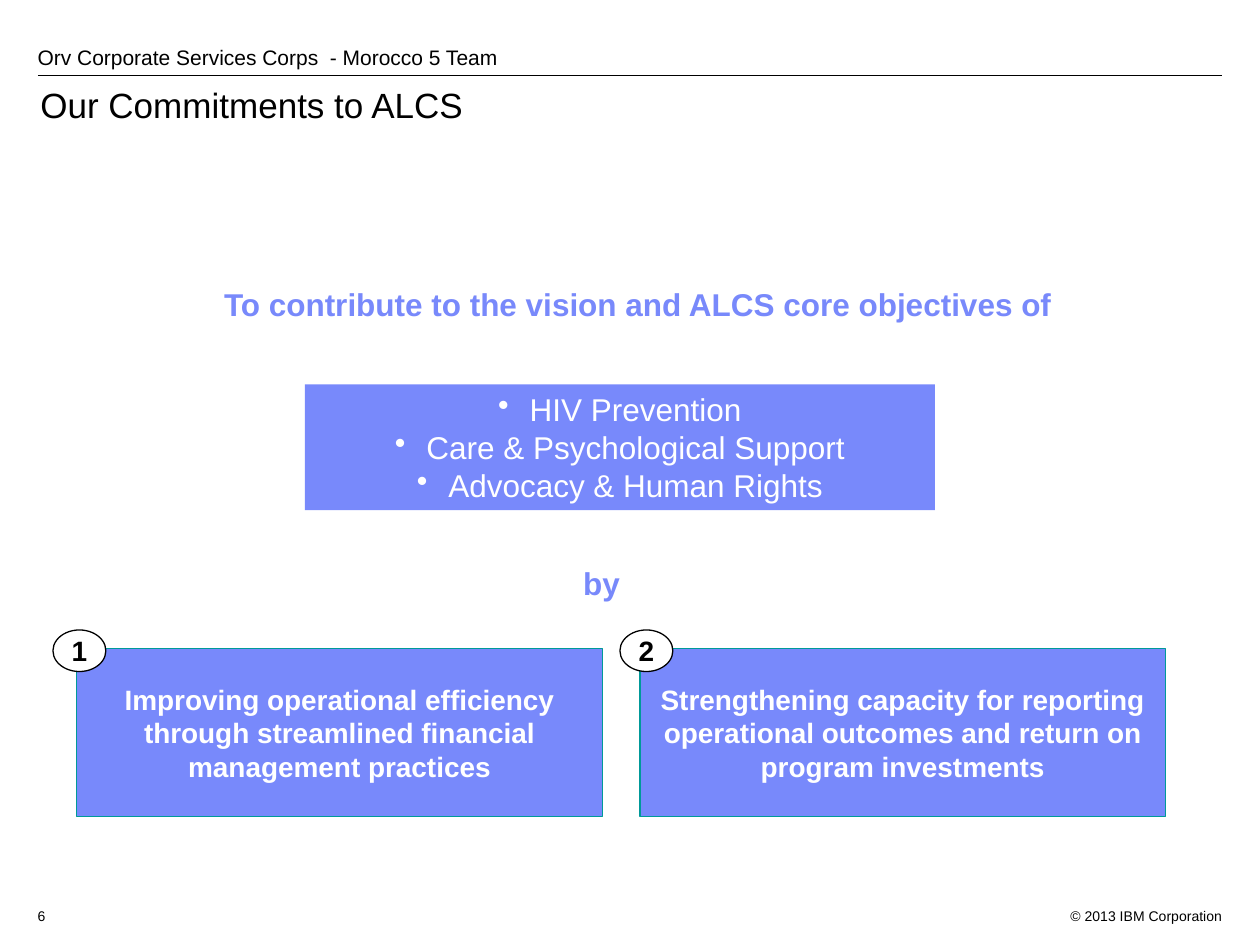
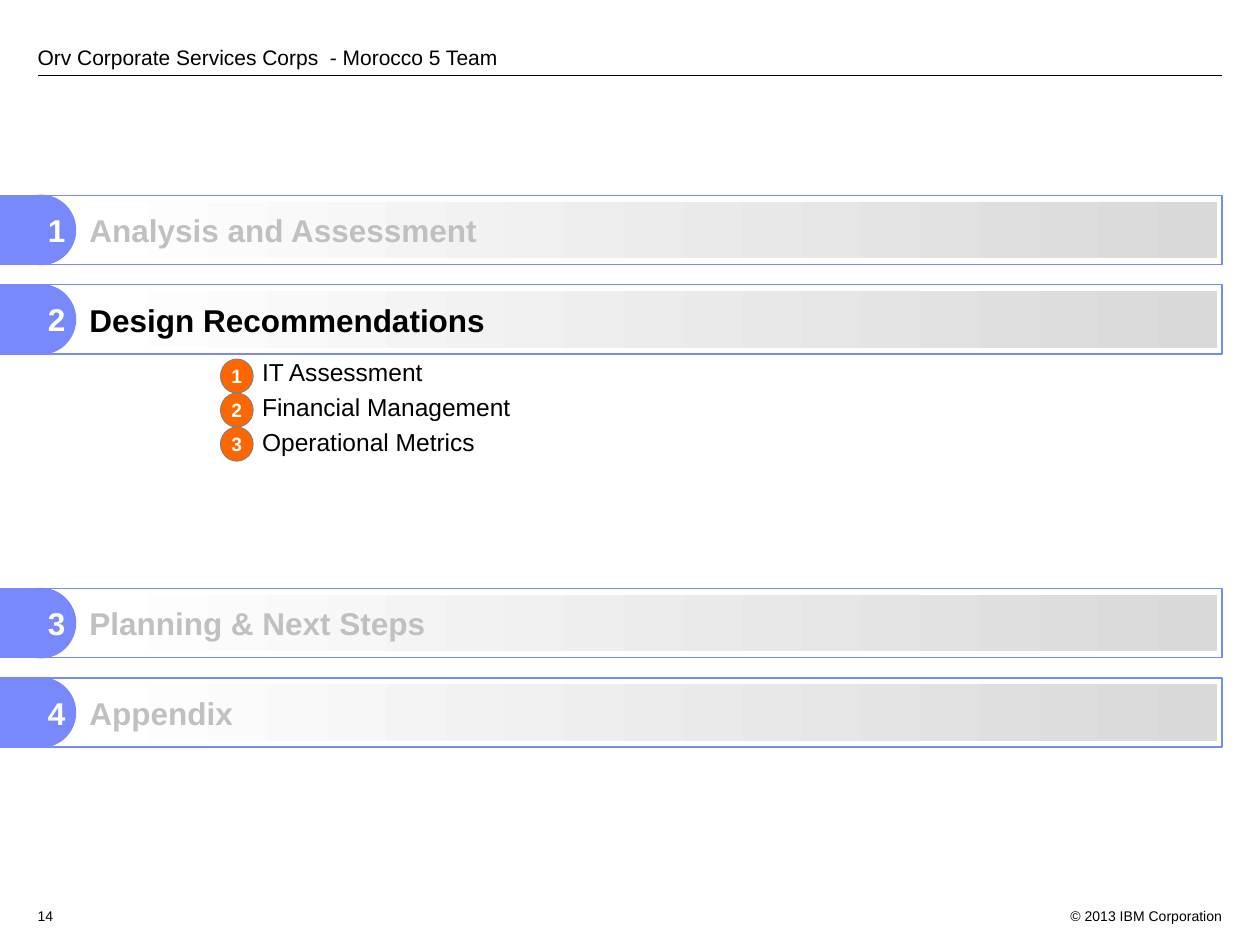
"""Build the commitments slide and the agenda slide."""
from lxml import etree
from pptx import Presentation
from pptx.dml.color import RGBColor
from pptx.enum.shapes import MSO_CONNECTOR, MSO_SHAPE
from pptx.enum.text import MSO_ANCHOR, MSO_AUTO_SIZE, PP_ALIGN
from pptx.oxml.ns import qn
from pptx.util import Emu, Pt

RECT, OVAL = MSO_SHAPE.RECTANGLE, MSO_SHAPE.OVAL
TOP, MID, LOW = MSO_ANCHOR.TOP, MSO_ANCHOR.MIDDLE, MSO_ANCHOR.BOTTOM
LEFT, MIDST, RIGHT = PP_ALIGN.LEFT, PP_ALIGN.CENTER, PP_ALIGN.RIGHT
PX = 9144
INK = {"blue": "7889FB", "teal": "009999", "black": "000000",
       "white": "FFFFFF", "pale": "D9D9D9", "dim": "C0C0C0",
       "fire": "FF6600", "grey": "808080"}

HEAD = "Orv Corporate Services Corps  - Morocco 5 Team"
FOOT = "© 2013 IBM Corporation"
TITLE = "Our Commitments to ALCS"
LEADS = [("To contribute to the vision and ALCS core objectives of",
          (168, 221, 680, 40)),
         ("by", (453, 443, 49, 40))]
GOALS = ["HIV Prevention", "Care & Psychological Support",
         "Advocacy & Human Rights"]
MEANS = ["Improving operational efficiency through streamlined financial "
         "management practices",
         "Strengthening capacity for reporting operational outcomes and "
         "return on program investments"]
PARTS = [("Analysis and Assessment", 155), ("Design Recommendations", 226),
         ("Planning & Next Steps", 467), ("Appendix", 538)]
NOW = 1
TOPICS = ["IT Assessment", "Financial Management", "Operational Metrics"]


def rgb(name):
    """Return the named colour."""
    return RGBColor.from_string(INK[name])


def emu(*vals):
    """Turn px lengths into EMU."""
    return [Emu(val * PX) for val in vals]


def fmt(item, vals):
    """Set each value as an attribute of the item."""
    for key, val in vals.items():
        setattr(item, key, val)


def write(shape, lines, size, ink="black", bold=False, align=LEFT,
          anchor=TOP, pad=(10, 5, 10, 5), wrap=True, bullet=None, **para):
    """Fill a shape with formatted paragraphs."""
    frame = shape.text_frame
    left, top, right, low = emu(*pad)
    fmt(frame, {"auto_size": MSO_AUTO_SIZE.NONE, "word_wrap": wrap,
                "vertical_anchor": anchor, "margin_left": left,
                "margin_top": top, "margin_right": right,
                "margin_bottom": low})
    for num, line in enumerate(lines):
        par = frame.add_paragraph() if num else frame.paragraphs[0]
        if bullet:
            props = par._p.get_or_add_pPr()
            props.set("marL", str(25 * PX))
            props.set("indent", str(-25 * PX))
            etree.SubElement(props, qn("a:buChar")).set("char", bullet)
        run = par.add_run()
        run.text = line
        fmt(par, {"alignment": align, **para})
        if not num:
            par.space_before = Pt(0)
        fmt(run.font, {"name": "Arial", "size": Pt(size), "bold": bold})
        run.font.color.rgb = rgb(ink)


def label(slide, box, lines, size, **look):
    """Add a text box."""
    write(slide.shapes.add_textbox(*emu(*box)), lines, size, **look)


def block(shapes, kind, box, fill=None, line=None, width=0.75):
    """Add a plain shape with the given fill and line."""
    shape = shapes.add_shape(kind, *emu(*box))
    shape.shadow.inherit = False
    if fill:
        shape.fill.solid()
        shape.fill.fore_color.rgb = rgb(fill)
    else:
        shape.fill.background()
    if line:
        shape.line.color.rgb = rgb(line)
        shape.line.width = Pt(width)
    else:
        shape.line.fill.background()
    return shape


def start(deck, layout, page):
    """Add a slide with the shared rule, header and footer."""
    slide = deck.slides.add_slide(deck.slide_layouts[layout])
    rule = slide.shapes.add_connector(MSO_CONNECTOR.STRAIGHT,
                                      *emu(30, 60, 970, 60))
    rule.line.color.rgb = rgb("black")
    rule.line.width = Pt(0.75)
    etree.SubElement(rule._element.spPr, qn("a:effectLst"))
    label(slide, (830, 715, 150, 20), [FOOT], 8, align=RIGHT, wrap=False)
    label(slide, (20, 15, 863, 40), [HEAD], 12, anchor=LOW,
          pad=(10, 0, 10, 0))
    label(slide, (20, 715, 40, 20), [str(page)], 8)
    return slide


def commit(deck):
    """Build the commitments slide."""
    slide = start(deck, 5, 6)
    title = slide.shapes.title
    fmt(title, dict(zip(("left", "top", "width", "height"),
                        emu(22, 65, 872, 77))))
    write(title, [TITLE], 20, line_spacing=0.9)
    for text, box in LEADS:
        label(slide, box, [text], 18, ink="blue", bold=True, wrap=False)
    goals = block(slide.shapes, RECT, (242, 305, 500, 100), "blue")
    write(goals, GOALS, 18, ink="white", align=MIDST, bullet="•")
    for num, text in enumerate(MEANS):
        card = block(slide.shapes, RECT, (61 + 447 * num, 515, 417, 133),
                     "blue", "teal")
        write(card, [text], 16, ink="white", bold=True, align=MIDST,
              anchor=MID)
        badge = block(slide.shapes, OVAL, (42 + 450 * num, 500, 42, 33),
                      "white", "black")
        write(badge, [str(num + 1)], 16, bold=True, align=MIDST, anchor=MID,
              pad=(0, 0, 0, 0))


def band(slide, num, text, top):
    """Add one grouped agenda band."""
    shapes = slide.shapes.add_group_shape().shapes
    knob = block(shapes, OVAL, (5, top, 55, 55), "blue", "blue")
    write(knob, [str(num + 1)], 18, ink="white", bold=True, align=RIGHT,
          anchor=MID, pad=(0, 0, 0, 0))
    block(shapes, RECT, (0, top, 970, 55), line="blue")
    block(shapes, RECT, (0, top, 30, 55), "blue")
    bar = block(shapes, RECT, (71, top + 5, 895, 45))
    bar.fill.gradient()
    bar.fill.gradient_angle = 0
    for stop, ink in zip(bar.fill.gradient_stops, ("white", "pale")):
        stop.color.rgb = rgb(ink)
    write(bar, [text], 18, ink="black" if num == NOW else "dim", bold=True,
          anchor=MID, pad=(0, 5, 10, 5))


def agenda(deck):
    """Build the agenda slide."""
    slide = start(deck, 6, 14)
    label(slide, (208, 283, 762, 90), TOPICS, 14, pad=(0, 0, 0, 0),
          space_before=Pt(3.4))
    for num, (text, top) in enumerate(PARTS):
        band(slide, num, text, top)
    for num in range(len(TOPICS)):
        dot = block(slide.shapes, OVAL, (175, 285 + 27 * num, 26, 27),
                    "fire", "grey", 0.5)
        write(dot, [str(num + 1)], 11, ink="white", bold=True, align=MIDST,
              anchor=MID, pad=(0, 0, 0, 0))


def main():
    """Build and save the deck."""
    deck = Presentation()
    deck.slide_width, deck.slide_height = emu(1000, 750)
    commit(deck)
    agenda(deck)
    deck.save("out.pptx")


if __name__ == "__main__":
    main()
